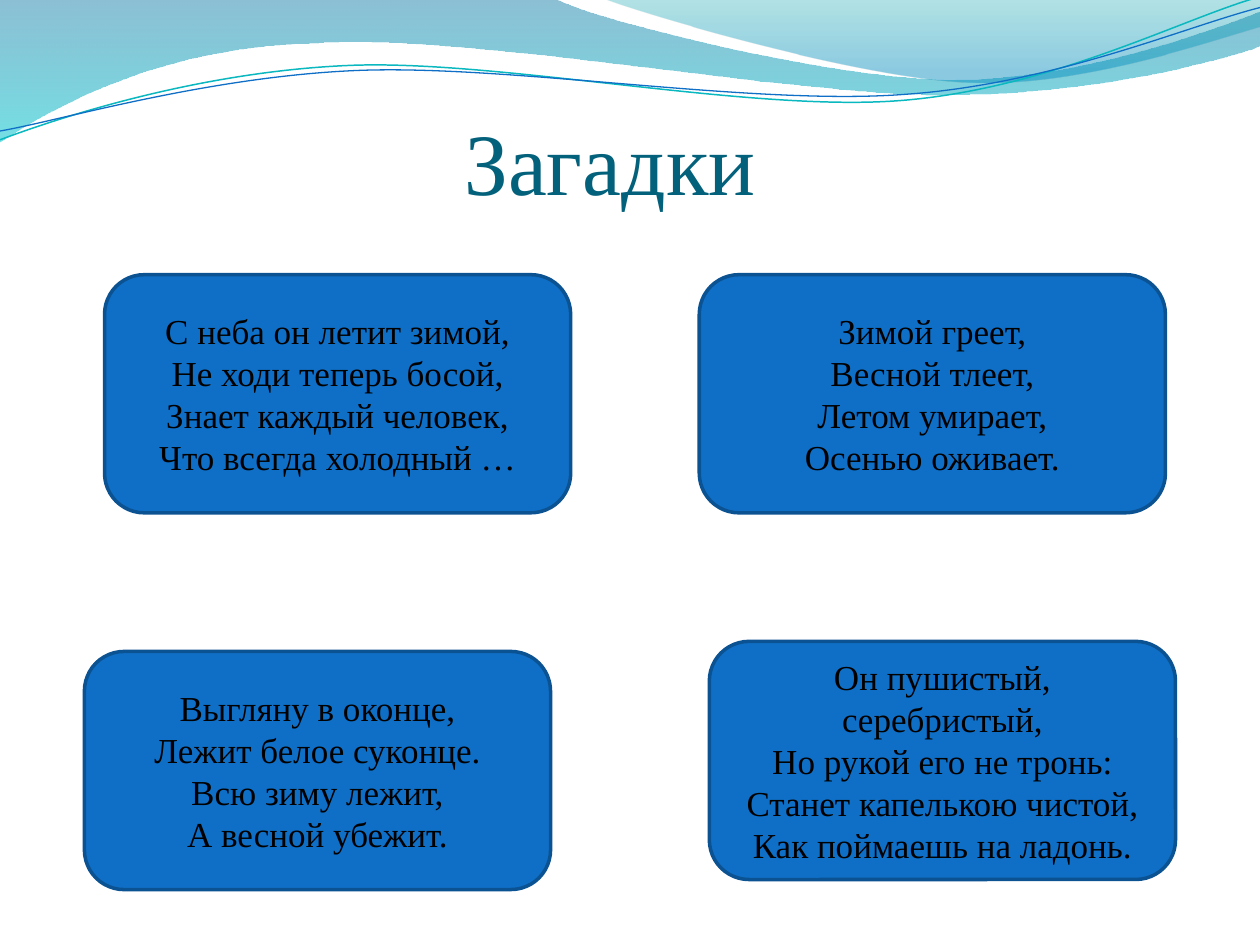
from lxml.etree import Element, SubElement
from pptx import Presentation
from pptx.dml.color import RGBColor
from pptx.enum.shapes import MSO_SHAPE
from pptx.enum.text import MSO_ANCHOR, MSO_AUTO_SIZE, PP_ALIGN
from pptx.oxml.ns import qn
from pptx.util import Emu, Pt

EMU_PER_PX = 9144  # 100 px to the inch
FONT = "Times New Roman"

# Waves: a start point, then segments of one point (line) or three (curve)
BANDS = [
    ((0, 0), [
        [(440, -1)],
        [(476, 17), (664, 63), (758, 63)],
        [(853, 63), (958, 26), (1000, 9)],
        [(1001, 36)],
        [(983, 44), (870, 76), (746, 75)],
        [(622, 75), (382, 28), (257, 34)],
        [(129, 36), (46, 83), (-1, 113)],
    ], [(0, "0074A1", 45), (100, "00C6CF", 55)]),
    ((479, -1), [
        [(509, 11), (682, 62), (769, 65)],
        [(856, 69), (961, 32), (1000, 21)],
        [(1000, 0)],
    ], [(0, "00A1A9", 30), (80, "008BBF", 45)]),
]
STRANDS = [
    ((0, 111), [
        [(48, 93), (158, 57), (277, 52)],
        [(395, 47), (593, 89), (713, 80)],
        [(833, 71), (938, 15), (998, -2)],
    ], "0AB8BF", 0.85),
    ((0, 104), [
        [(47, 96), (164, 61), (283, 56)],
        [(403, 51), (597, 84), (717, 75)],
        [(836, 67), (941, 21), (1000, 6)],
    ], "0F6FC6", 0.75),
]

CARD_SIZE = (370, 189)
RIDDLES = [
    ((555, 218), "Зимой греет,\nВесной тлеет,\nЛетом умирает,\nОсенью оживает."),
    ((83, 218), "С неба он летит зимой,\nНе ходи теперь босой,\n"
                "Знает каждый человек,\nЧто всегда холодный …"),
    ((563, 509), "Он пушистый, серебристый,\nНо рукой его не тронь:\n"
                 "Станет капелькою чистой,\nКак поймаешь на ладонь."),
    ((67, 517), "Выгляну в оконце,\nЛежит белое суконце.\n"
                "Всю зиму лежит,\nА весной убежит."),
]


def px(value):
    return Emu(value * EMU_PER_PX)


def color(hex_string):
    return RGBColor.from_string(hex_string)


def bend_segments(shape, segments):
    """Turn each run of three lines into one cubic curve."""
    lines = iter(list(shape.element.iter(qn("a:lnTo"))))
    for segment in segments:
        pieces = [next(lines) for _ in segment]
        if len(pieces) == 3:
            curve = Element(qn("a:cubicBezTo"))
            pieces[0].addprevious(curve)
            for piece in pieces:
                curve.append(piece[0])
                piece.getparent().remove(piece)


def add_outline(slide, origin, start, segments, close):
    left, top = origin
    points = [start] + [point for segment in segments for point in segment]
    points = [(px(left + x), px(top + y)) for x, y in points]
    builder = slide.shapes.build_freeform(*points[0])
    builder.add_line_segments(points[1:], close=close)
    shape = builder.convert_to_shape()
    bend_segments(shape, segments)
    shape.shadow.inherit = False
    return shape


def fill_gradient(shape, stops):
    """Vertical gradient; each stop is position, colour and opacity in percent."""
    shape.fill.gradient()
    shape.fill.gradient_angle = 270
    for stop, (position, hex_string, _) in zip(shape.fill.gradient_stops, stops):
        stop.position = position / 100
        stop.color.rgb = color(hex_string)
    for node, (_, _, opacity) in zip(shape.element.iter(qn("a:srgbClr")), stops):
        SubElement(node, qn("a:alpha")).set("val", str(opacity * 1000))


def add_waves(slide, left, top):
    for start, segments, stops in BANDS:
        band = add_outline(slide, (left, top), start, segments, True)
        fill_gradient(band, stops)
        band.line.fill.background()
    for start, segments, hex_string, width in STRANDS:
        strand = add_outline(slide, (left, top), start, segments, False)
        strand.fill.background()
        strand.line.color.rgb = color(hex_string)
        strand.line.width = Pt(width)


def format_text(paragraph, size, hex_string):
    paragraph.alignment = PP_ALIGN.CENTER
    for run in paragraph.runs:
        run.font.size = Pt(size)
        run.font.name = FONT
        run.font.color.rgb = color(hex_string)


def place_title(slide, left, top, width, height):
    title = slide.shapes.title
    title.left, title.top, title.width, title.height = map(px, (left, top, width, height))
    text_frame = title.text_frame
    text_frame.text = "Загадки "
    text_frame.auto_size = MSO_AUTO_SIZE.NONE
    text_frame.vertical_anchor = MSO_ANCHOR.BOTTOM
    text_frame.margin_left = text_frame.margin_right = text_frame.margin_bottom = 0
    text_frame.margin_top = px(5)
    format_text(text_frame.paragraphs[0], 50, "04617B")
    slide.shapes.element.append(title.element)  # in front of the waves


def add_card(slide, left, top, width, height, riddle):
    card = slide.shapes.add_shape(
        MSO_SHAPE.ROUNDED_RECTANGLE, *map(px, (left, top, width, height)))
    card.shadow.inherit = False
    card.fill.solid()
    card.fill.fore_color.rgb = color("0F6FC6")
    card.line.color.rgb = color("0B5292")
    card.line.width = Pt(2)
    card.text_frame.word_wrap = True
    card.text_frame.vertical_anchor = MSO_ANCHOR.MIDDLE
    paragraph = card.text_frame.paragraphs[0]
    paragraph.text = riddle.replace("\n", "\v")  # line breaks in one paragraph
    format_text(paragraph, 20, "000000")


def main():
    presentation = Presentation()
    presentation.slide_width, presentation.slide_height = px(1000), px(750)
    slide = presentation.slides.add_slide(presentation.slide_layouts[5])
    add_waves(slide, 0, 0)
    place_title(slide, 43, 44, 900, 125)
    for position, riddle in RIDDLES:
        add_card(slide, *position, *CARD_SIZE, riddle)
    presentation.save("out.pptx")


if __name__ == "__main__":
    main()
